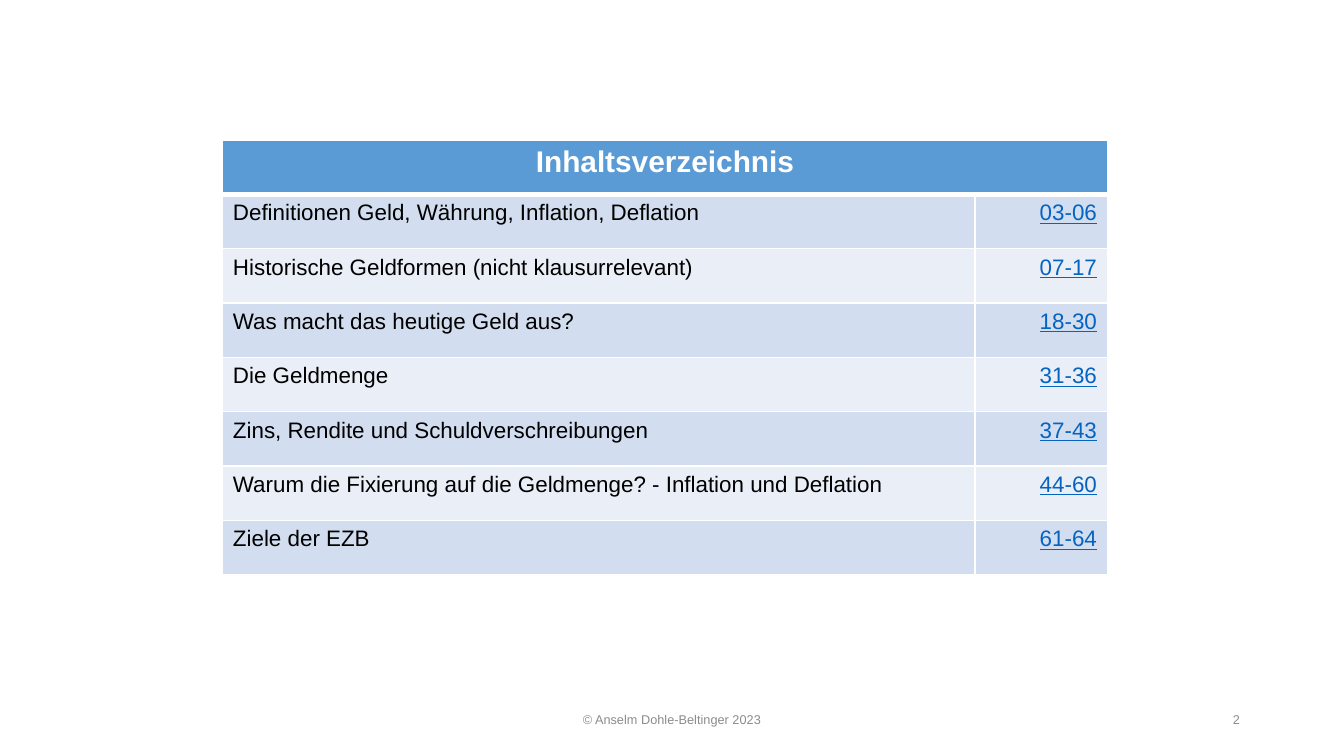
from lxml.etree import SubElement
from pptx import Presentation
from pptx.dml.color import RGBColor as RGB
from pptx.enum.text import MSO_ANCHOR as Anchor, PP_ALIGN as Align
from pptx.oxml.ns import qn
from pptx.util import Pt

SCALE = 914400 / 134.4
FONT = "Arial"
WHITE, BLACK, GREY = "FFFFFF", "000000", "8C8C8C"
HEAD, LINK = "5B9BD5", "0563C1"
BANDS = ["D2DEEF", "EAEFF7"]
PAD_X, PAD_Y = 11, 6

TITLE = "Inhaltsverzeichnis"
TOPICS = [
    ("Definitionen Geld, Währung, Inflation, Deflation", "03-06"),
    ("Historische Geldformen (nicht klausurrelevant)", "07-17"),
    ("Was macht das heutige Geld aus?", "18-30"),
    ("Die Geldmenge", "31-36"),
    ("Zins, Rendite und Schuldverschreibungen", "37-43"),
    ("Warum die Fixierung auf die Geldmenge? - Inflation und Deflation", "44-60"),
    ("Ziele der EZB", "61-64"),
]


def px(n):
    return round(n * SCALE)


def color(code):
    return RGB.from_string(code)


def write(frame, text, size, code, align, bold=False, line=False):
    par = frame.paragraphs[0]
    par.text = text
    par.alignment = align
    font = par.font
    font.name, font.size = FONT, Pt(size)
    font.bold, font.underline = bold, line
    font.color.rgb = color(code)


def pad(box):
    box.margin_left = box.margin_right = px(PAD_X)
    box.margin_top = box.margin_bottom = px(PAD_Y)


def style(cell, code, top=1, bottom=1):
    pad(cell)
    cell.fill.solid()
    cell.fill.fore_color.rgb = color(code)
    # Borders come before the fill in the cell properties
    props = cell._tc.get_or_add_tcPr()
    sides = [("L", 1), ("R", 1), ("T", top), ("B", bottom)]
    for pos, (side, width) in enumerate(sides):
        edge = SubElement(props, qn("a:ln" + side), w=str(Pt(width)))
        fill = SubElement(edge, qn("a:solidFill"))
        SubElement(fill, qn("a:srgbClr"), val=WHITE)
        props.insert(pos, edge)


def add_index(slide, left, top, widths, height):
    count = len(TOPICS) + 1
    frame = slide.shapes.add_table(
        count, 2, px(left), px(top), px(sum(widths)), px(height))
    table = frame.table
    for col, width in zip(table.columns, widths):
        col.width = px(width)
    for row in table.rows:
        row.height = px(height / count)

    # Header across both columns
    first, last = table.cell(0, 0), table.cell(0, 1)
    first.merge(last)
    for cell in (first, last):
        style(cell, HEAD, bottom=3)
    write(first.text_frame, TITLE, 16, WHITE, Align.CENTER, bold=True)

    # Banded topic rows
    for num, (topic, pages) in enumerate(TOPICS):
        name, ref = table.cell(num + 1, 0), table.cell(num + 1, 1)
        for cell in (name, ref):
            style(cell, BANDS[num % 2], top=1 if num else 3)
        write(name.text_frame, topic, 12, BLACK, Align.LEFT)
        write(ref.text_frame, pages, 12, LINK, Align.RIGHT, line=True)


def add_note(slide, left, width, text, align):
    box = slide.shapes.add_textbox(px(left), px(700), px(width), px(40))
    frame = box.text_frame
    frame.word_wrap = True
    frame.vertical_anchor = Anchor.MIDDLE
    pad(frame)
    write(frame, text, 6.8, GREY, align)


def main():
    deck = Presentation()
    deck.slide_width, deck.slide_height = px(1344), px(756)
    slide = deck.slides.add_slide(deck.slide_layouts[6])

    add_index(slide, 222, 140, [753, 133], 435)

    # Footer
    add_note(slide, 445, 454, "© Anselm Dohle-Beltinger 2023", Align.CENTER)
    add_note(slide, 949, 302, "2", Align.RIGHT)

    deck.save("out.pptx")


if __name__ == "__main__":
    main()
